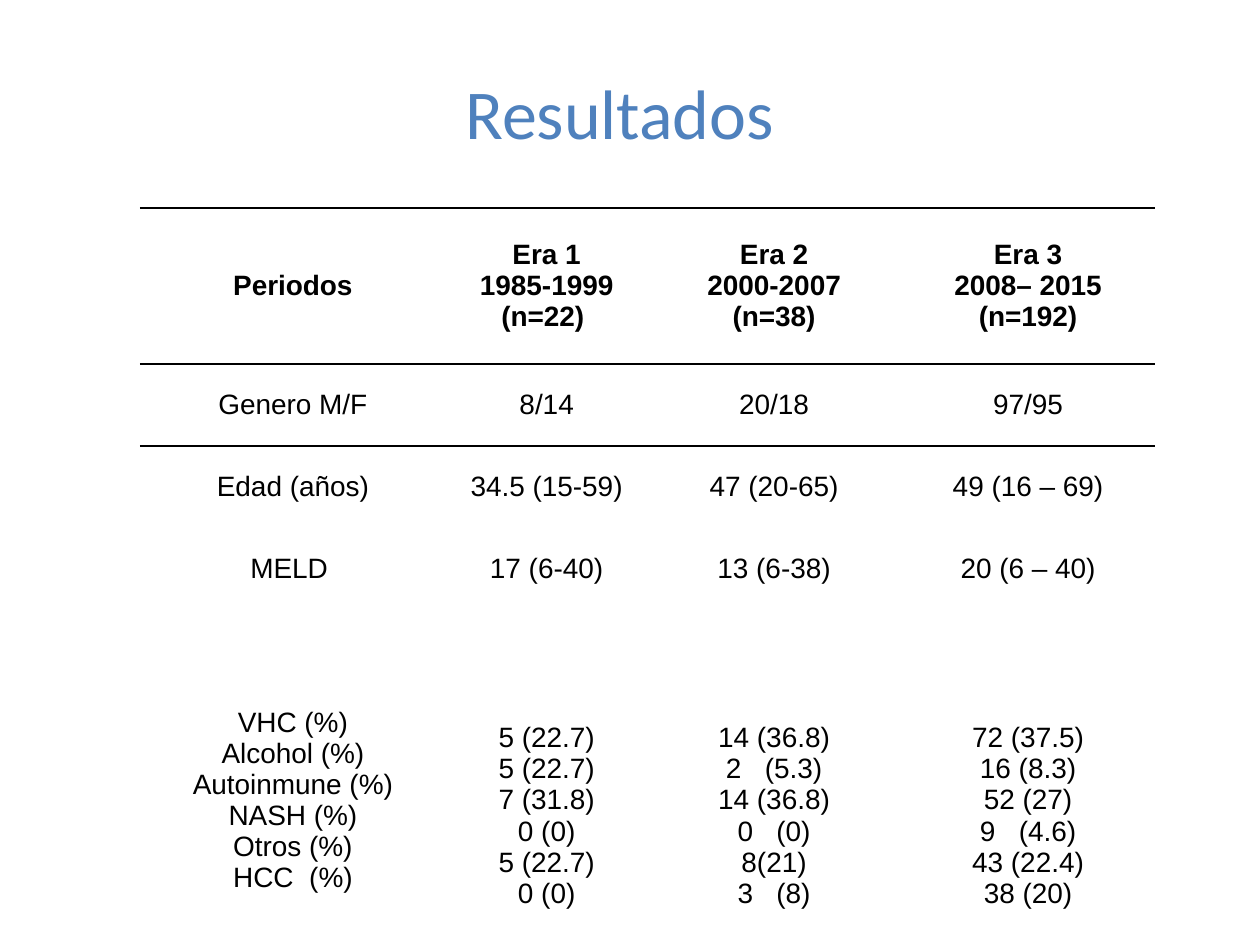
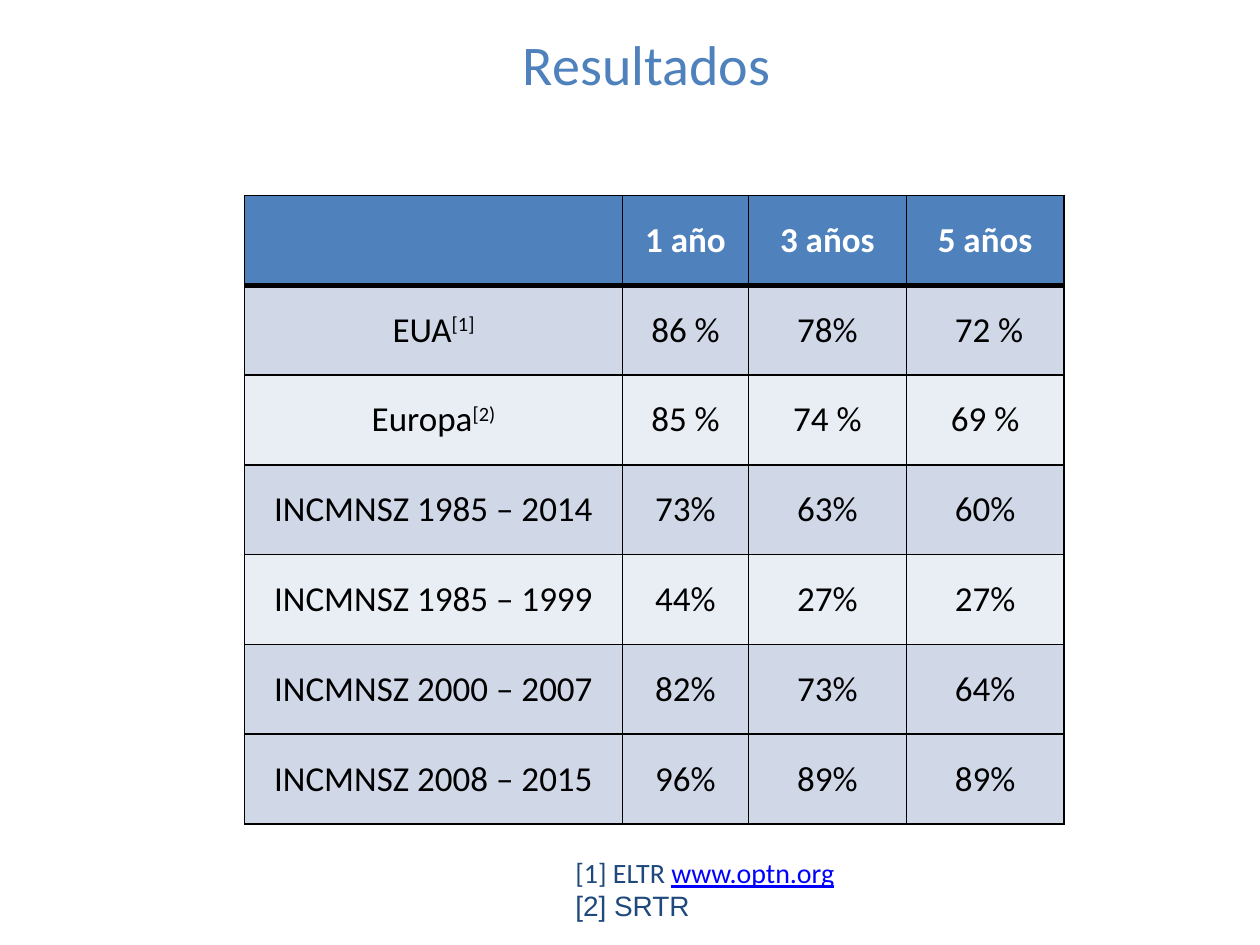
import pptx
import pptx.dml.color
import pptx.enum.text
import pptx.oxml.ns
import pptx.util
from lxml import etree

Cm = pptx.util.Cm
Pt = pptx.util.Pt
CENTER = pptx.enum.text.PP_ALIGN.CENTER
LEFT = pptx.enum.text.PP_ALIGN.LEFT
MIDDLE = pptx.enum.text.MSO_ANCHOR.MIDDLE
TOP = pptx.enum.text.MSO_ANCHOR.TOP
PLAIN_STYLE = "{2D5ABB26-0587-4C30-8999-92F81FD0307C}"

BLUE, NAVY, LINK = "4F81BD", "1F497D", "0000FF"
BLACK, WHITE = "000000", "FFFFFF"
DARK_BAND, LIGHT_BAND = "D0D8E8", "E9EDF4"

SUPER = {"baseline": "30000"}
WIDE = (" ", {"spc": "890"})
HALF_WIDE = (" ", {"spc": "445"})

TITLE = "Resultados"

ERAS = {
    "place": (2.82, 4.19),
    "columns": [6.17, 4.06, 5.11, 5.13],
    "heights": [3.15, 1.65, 1.65, 1.65, 7.06],
    "rows": [
        [["Periodos"], ["Era 1", "1985-1999", "(n=22) "],
         ["Era 2", "2000-2007", "(n=38)"], ["Era 3", "2008– 2015", "(n=192)"]],
        [["Genero M/F"], ["8/14"], ["20/18"], ["97/95"]],
        [["Edad (años)"], ["34.5 (15-59)"], ["47 (20-65)"], ["49 (16 – 69)"]],
        [["MELD "], ["17 (6-40)"], ["13 (6-38)"], ["20 (6 – 40)"]],
        [["VHC (%)", "Alcohol (%)", "Autoinmune (%)", "NASH (%)", "Otros (%)",
          ("HCC", HALF_WIDE, "(%)")],
         ["5 (22.7)", "5 (22.7)", "7 (31.8)", "0 (0)", "5 (22.7)", "0 (0)"],
         ["14 (36.8)", ("2", WIDE, "(5.3)"), "14 (36.8)", ("0", WIDE, "(0)"),
          "8(21)", ("3", WIDE, "(8)")],
         ["72 (37.5)", "16 (8.3)", "52 (27)", ("9", WIDE, "(4.6)"),
          "43 (22.4)", "38 (20)"]],
    ],
}
CAUSE_MARGINS = [0.75, 1.38, 1.38, 1.38]

SURVIVAL = {
    "place": (4.93, 3.94),
    "columns": [7.62, 2.54, 3.18, 3.18],
    "heights": [1.81] * 7,
    "rows": [
        [[], ["1 año"], ["3 años"], ["5 años"]],
        [[("EUA", ("[1]", SUPER))], ["86 %"], ["78%"], [" 72 %"]],
        [[("Europa", ("[2)", SUPER))], ["85 %"], ["74 %"], ["69 %"]],
        [["INCMNSZ 1985 – 2014"], ["73%"], ["63%"], ["60%"]],
        [["INCMNSZ 1985 – 1999"], ["44%"], ["27%"], ["27%"]],
        [["INCMNSZ 2000 – 2007"], ["82%"], ["73%"], ["64%"]],
        [["INCMNSZ 2008 – 2015"], ["96%"], ["89%"], ["89%"]],
    ],
}
SURVIVAL_FILLS = [BLUE, DARK_BAND, LIGHT_BAND, DARK_BAND, LIGHT_BAND, DARK_BAND, DARK_BAND]

SOURCES = [
    [("[1] ELTR ", "Calibri", NAVY, False), ("www.optn.org", "Calibri", LINK, True)],
    [("[2] SRTR", "Arial", NAVY, False)],
]


def rgb(value):
    return pptx.dml.color.RGBColor.from_string(value)


def add_span(para, text, color, looks, extra=None):
    span = para.add_run()
    span.text = text
    for name, value in looks.items():
        setattr(span.font, name, value)
    span.font.color.rgb = rgb(color)
    for name, value in (extra or {}).items():
        span.font._element.set(name, value)


def write_lines(frame, lines, color, looks, align=CENTER):
    for index, line in enumerate(lines):
        para = frame.add_paragraph() if index else frame.paragraphs[0]
        para.alignment = align
        for part in (line,) if isinstance(line, str) else line:
            text, extra = (part, None) if isinstance(part, str) else part
            add_span(para, text, color, looks, extra)


def add_border(cell, side, points):
    line = etree.SubElement(cell._tc.get_or_add_tcPr(), pptx.oxml.ns.qn(f"a:ln{side}"), w=str(Pt(points)))
    fill = etree.SubElement(line, pptx.oxml.ns.qn("a:solidFill"))
    etree.SubElement(fill, pptx.oxml.ns.qn("a:srgbClr"), val=BLACK)


def add_page(deck, size, place):
    page = deck.slides.add_slide(deck.slide_layouts[5])
    title = page.shapes.title
    title.left, title.top, title.width, title.height = map(Cm, place)
    frame = title.text_frame
    frame.auto_size = pptx.enum.text.MSO_AUTO_SIZE.NONE
    frame.vertical_anchor = TOP
    write_lines(frame, [TITLE], BLUE, {"name": "Calibri", "size": Pt(size)})
    return page


def add_grid(page, content, font, size, header_color, borders_for):
    columns, heights = content["columns"], content["heights"]
    table = page.shapes.add_table(
        len(heights), len(columns), *map(Cm, content["place"]),
        Cm(sum(columns)), Cm(sum(heights))).table
    table.first_row = table.horz_banding = False
    table._tbl.tblPr.find(pptx.oxml.ns.qn("a:tableStyleId")).text = PLAIN_STYLE
    for column, width in zip(table.columns, columns):
        column.width = Cm(width)
    for row_index, (row, height) in enumerate(zip(table.rows, heights)):
        row.height = Cm(height)
        is_header = row_index == 0
        looks = {"name": font, "size": Pt(size), "bold": is_header}
        for cell, lines in zip(row.cells, content["rows"][row_index]):
            cell.vertical_anchor = MIDDLE
            write_lines(cell.text_frame, lines, header_color if is_header else BLACK, looks)
            for side, points in borders_for(row_index).items():
                add_border(cell, side, points)
    return table


def era_borders(row):
    return {0: {"T": 1, "B": 1}, 1: {"T": 1}, 4: {"B": 1}}.get(row, {})


def survival_borders(row):
    return {"L": 1, "R": 1, "T": 3 if row == 1 else 1, "B": 3 if row == 0 else 1}


def build_eras(deck):
    page = add_page(deck, 40, (3.3, 1.27, 18.39, 1.96))
    table = add_grid(page, ERAS, "Arial", 16, BLACK, era_borders)
    for column, margin in enumerate(CAUSE_MARGINS):
        table.cell(4, column).margin_top = Cm(margin)


def build_survival(deck):
    page = add_page(deck, 32, (10.24, 0.46, 5.59, 1.63))
    table = add_grid(page, SURVIVAL, "Calibri", 20, WHITE, survival_borders)
    for row, color in zip(table.rows, SURVIVAL_FILLS):
        for cell in row.cells:
            cell.fill.solid()
            cell.fill.fore_color.rgb = rgb(color)
    box = page.shapes.add_textbox(*map(Cm, (11.35, 17.12, 5.89, 1.63)))
    frame = box.text_frame
    frame.word_wrap = False
    for index, source in enumerate(SOURCES):
        para = frame.add_paragraph() if index else frame.paragraphs[0]
        para.alignment = LEFT
        for text, font, color, underline in source:
            add_span(para, text, color, {"name": font, "size": Pt(16), "underline": underline})


def main():
    deck = pptx.Presentation()
    deck.slide_width, deck.slide_height = Cm(25.4), Cm(19.05)
    build_eras(deck)
    build_survival(deck)
    deck.save("out.pptx")


if __name__ == "__main__":
    main()
